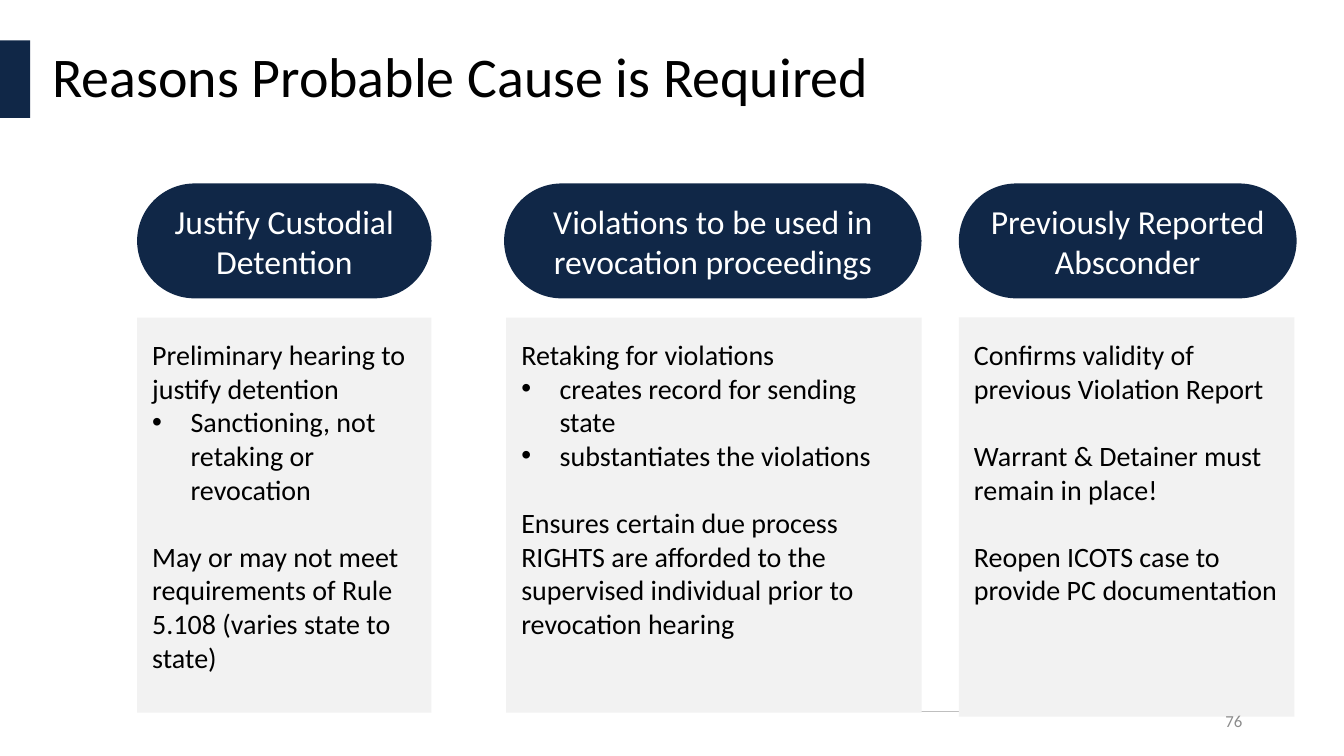
import pptx
import pptx.dml.color
import pptx.enum.shapes
import pptx.enum.text
import pptx.oxml.ns
import pptx.util
from lxml import etree

Inches = pptx.util.Inches
Pt = pptx.util.Pt
RGBColor = pptx.dml.color.RGBColor
Shape = pptx.enum.shapes.MSO_SHAPE
Align = pptx.enum.text.PP_ALIGN
Anchor = pptx.enum.text.MSO_ANCHOR
qn = pptx.oxml.ns.qn

NAVY = RGBColor(0x10, 0x27, 0x47)
PANEL_GRAY = RGBColor(0xF2, 0xF2, 0xF2)
RULE_GRAY = RGBColor(0xBF, 0xBF, 0xBF)
NUMBER_GRAY = RGBColor(0x8C, 0x8C, 0x8C)
WHITE = RGBColor(0xFF, 0xFF, 0xFF)
BLACK = RGBColor(0, 0, 0)

FONT = "Calibri"
PILL_TOP, PILL_HEIGHT = 1.82, 1.14
PANEL_TOP = 3.15
PLAIN, BULLET, NEW_BLOCK = "plain", "bullet", "new block"

REASONS = [
    ("Justify Custodial Detention", (1.36, 2.92), (1.36, 2.92, 3.92), [
        (PLAIN, "Preliminary hearing to justify detention"),
        (BULLET, "Sanctioning, not retaking or revocation"),
        (NEW_BLOCK, "May or may not meet requirements of Rule 5.108 (varies state to state)"),
    ]),
    ("Violations to be used in revocation proceedings", (5, 4.14), (5.02, 4.12, 3.92), [
        (PLAIN, "Retaking for violations"),
        (BULLET, "creates record for sending state"),
        (BULLET, "substantiates the violations"),
        (NEW_BLOCK, "Ensures certain due process RIGHTS are afforded to the "
                    "supervised individual prior to revocation hearing"),
    ]),
    ("Previously Reported Absconder", (9.51, 3.35), (9.51, 3.33, 3.96), [
        (PLAIN, "Confirms validity of previous Violation Report"),
        (NEW_BLOCK, "Warrant & Detainer must remain in place!"),
        (NEW_BLOCK, "Reopen ICOTS case to provide PC documentation"),
    ]),
]


def add_block(page, kind, left, top, width, height, color):
    block = page.shapes.add_shape(
        kind, Inches(left), Inches(top), Inches(width), Inches(height))
    block.shadow.inherit = False
    block.fill.solid()
    block.fill.fore_color.rgb = color
    block.line.fill.background()
    return block


def set_frame(box, anchor, left=0, top=0, right=0, bottom=0):
    frame = box.text_frame
    frame.word_wrap = True
    frame.vertical_anchor = anchor
    frame.margin_left, frame.margin_top = Inches(left), Inches(top)
    frame.margin_right, frame.margin_bottom = Inches(right), Inches(bottom)
    return frame


def write(para, text, size, color, align=Align.LEFT):
    para.alignment = align
    span = para.add_run()
    span.text = text
    span.font.name = FONT
    span.font.size = Pt(size)
    span.font.color.rgb = color


def add_bullet(para):
    properties = para._p.get_or_add_pPr()
    properties.set("marL", str(Inches(0.38)))
    properties.set("indent", str(-Inches(0.38)))
    etree.SubElement(properties, qn("a:buFont")).set("typeface", "Arial")
    etree.SubElement(properties, qn("a:buChar")).set("char", "•")


def add_title(page, left, top, width, height):
    add_block(page, Shape.RECTANGLE, 0, top, 0.3, height, NAVY)
    box = page.shapes.add_textbox(
        Inches(left), Inches(top), Inches(width), Inches(height))
    para = set_frame(box, Anchor.MIDDLE).paragraphs[0]
    para.line_spacing = 0.9
    write(para, "Reasons Probable Cause is Required", 40, BLACK)


def add_footer_rule(page, left, right, top):
    rule = page.shapes.add_connector(
        pptx.enum.shapes.MSO_CONNECTOR.STRAIGHT,
        Inches(left), Inches(top), Inches(right), Inches(top))
    rule.line.color.rgb = RULE_GRAY
    rule.line.width = Pt(0.5)
    etree.SubElement(rule._element.spPr, qn("a:effectLst"))


def add_pill(page, left, width, heading):
    pill = add_block(
        page, Shape.ROUNDED_RECTANGLE, left, PILL_TOP, width, PILL_HEIGHT, NAVY)
    pill.adjustments[0] = 0.5
    frame = set_frame(pill, Anchor.MIDDLE)
    write(frame.paragraphs[0], heading, 24, WHITE, Align.CENTER)


def add_panel(page, left, width, height, points):
    panel = add_block(
        page, Shape.RECTANGLE, left, PANEL_TOP, width, height, PANEL_GRAY)
    frame = set_frame(panel, Anchor.TOP, 0.15, 0.2, 0.15, 0.1)
    for index, (style, text) in enumerate(points):
        para = frame.add_paragraph() if index else frame.paragraphs[0]
        if style == BULLET:
            add_bullet(para)
        elif style == NEW_BLOCK:
            para.space_before = Pt(24)
        write(para, text, 20, BLACK)


def add_page_number(page, left, top, width, height):
    box = page.shapes.add_textbox(
        Inches(left), Inches(top), Inches(width), Inches(height))
    frame = set_frame(box, Anchor.MIDDLE, 0.1, 0.05, 0.1, 0.05)
    write(frame.paragraphs[0], "76", 12, NUMBER_GRAY, Align.RIGHT)


def main():
    deck = pptx.Presentation()
    deck.slide_width, deck.slide_height = Inches(13.33), Inches(7.5)
    page = deck.slides.add_slide(deck.slide_layouts[6])
    add_title(page, 0.52, 0.4, 12.31, 0.77)
    add_footer_rule(page, 5.17, 12.26, 7.06)
    for heading, pill_span, panel_box, points in REASONS:
        add_pill(page, *pill_span, heading)
        add_panel(page, *panel_box, points)
    add_page_number(page, 9.42, 6.95, 3, 0.4)
    deck.save("out.pptx")


if __name__ == "__main__":
    main()
